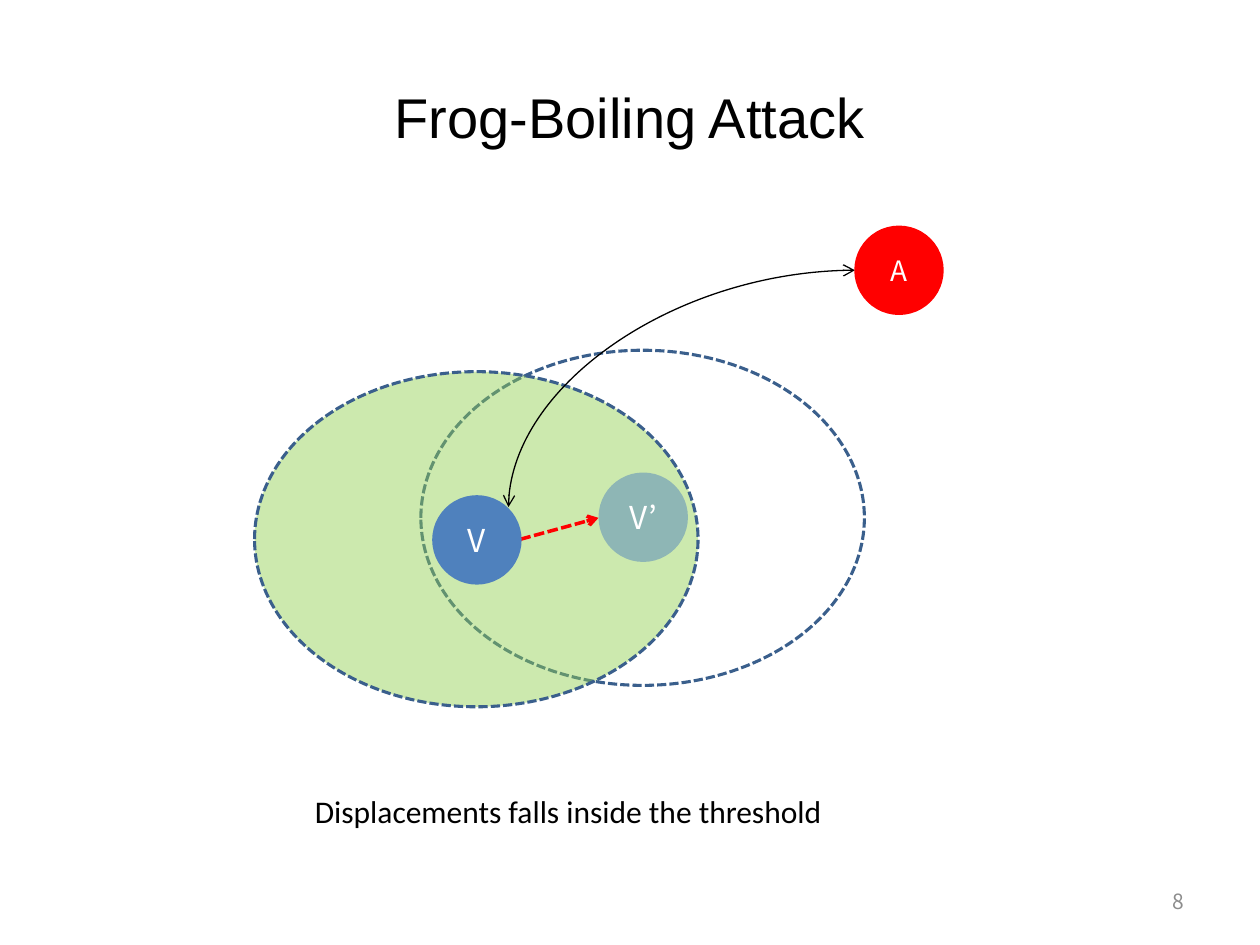
from dataclasses import dataclass
from typing import Optional

from lxml.etree import SubElement
from pptx import Presentation
from pptx.dml.color import RGBColor
from pptx.enum.dml import MSO_LINE
from pptx.enum.shapes import MSO_CONNECTOR, MSO_SHAPE
from pptx.enum.text import MSO_ANCHOR, PP_ALIGN
from pptx.oxml.ns import qn
from pptx.util import Inches, Pt

BLACK = RGBColor(0x00, 0x00, 0x00)
WHITE = RGBColor(0xFF, 0xFF, 0xFF)
GRAY = RGBColor(0x8C, 0x8C, 0x8C)
RED = RGBColor(0xFF, 0x00, 0x00)
BLUE = RGBColor(0x4F, 0x81, 0xBD)
NAVY = RGBColor(0x3A, 0x5F, 0x8C)
GREEN = RGBColor(0x92, 0xD0, 0x50)
SANS = "Noto Sans CJK KR"


@dataclass
class Oval:
    left: float
    top: float
    width: float
    height: float
    fill: Optional[RGBColor] = None
    alpha: int = 100
    text: str = ""
    size: int = 18


@dataclass
class Label:
    left: float
    top: float
    width: float
    height: float
    text: str
    size: int
    font: str
    color: RGBColor
    align: PP_ALIGN
    anchor: MSO_ANCHOR = MSO_ANCHOR.MIDDLE


ZONES = [
    Oval(3.34, 2.78, 3.52, 2.66),
    Oval(2.02, 2.95, 3.52, 2.66, GREEN, 46),
]
NODES = [
    Oval(6.78, 1.79, 0.71, 0.71, RED, text="A", size=16),
    Oval(3.43, 3.93, 0.71, 0.71, BLUE, text="V"),
    Oval(4.75, 3.75, 0.71, 0.71, BLUE, 49, "V’"),
]
LABELS = [
    Label(0.5, 0.3, 9, 1.25, "Frog-Boiling Attack", 32, "Arial", BLACK, PP_ALIGN.CENTER),
    Label(7.17, 6.95, 2.33, 0.4, "8", 12, SANS, GRAY, PP_ALIGN.RIGHT),
    Label(2.4, 6.24, 4.38, 0.4, "Displacements falls inside the threshold", 18,
          "Calibri", BLACK, PP_ALIGN.LEFT, MSO_ANCHOR.TOP),
]


def write(frame, text: str, size: int, font: str, color: RGBColor, align: PP_ALIGN) -> None:
    para = frame.paragraphs[0]
    para.alignment = align
    run = para.add_run()
    run.text = text
    run.font.size = Pt(size)
    run.font.name = font
    run.font.color.rgb = color
    for tag in ("a:ea", "a:cs"):
        SubElement(run.font._element, qn(tag), typeface=font)


def add_oval(slide, oval: Oval):
    shape = slide.shapes.add_shape(
        MSO_SHAPE.OVAL, Inches(oval.left), Inches(oval.top), Inches(oval.width), Inches(oval.height))
    shape.shadow.inherit = False
    if oval.fill is None:
        shape.fill.background()
    else:
        shape.fill.solid()
        shape.fill.fore_color.rgb = oval.fill
        if oval.alpha < 100:
            color = shape.element.spPr.find(qn("a:solidFill"))[0]
            SubElement(color, qn("a:alpha"), val=str(oval.alpha * 1000))
    return shape


def add_zone(slide, zone: Oval) -> None:
    line = add_oval(slide, zone).line
    line.color.rgb = NAVY
    line.width = Pt(1.75)
    line.dash_style = MSO_LINE.SQUARE_DOT


def add_node(slide, node: Oval) -> None:
    shape = add_oval(slide, node)
    shape.line.fill.background()
    frame = shape.text_frame
    frame.vertical_anchor = MSO_ANCHOR.MIDDLE
    write(frame, node.text, node.size, SANS, WHITE, PP_ALIGN.CENTER)


def add_label(slide, label: Label) -> None:
    box = slide.shapes.add_textbox(
        Inches(label.left), Inches(label.top), Inches(label.width), Inches(label.height))
    frame = box.text_frame
    frame.word_wrap = True
    frame.vertical_anchor = label.anchor
    write(frame, label.text, label.size, label.font, label.color, label.align)


def add_arrow(slide, kind: MSO_CONNECTOR, start: tuple[float, float], end: tuple[float, float],
              color: RGBColor, width: float, ends: tuple[str, ...]):
    arrow = slide.shapes.add_connector(kind, *map(Inches, start + end))
    line = arrow.line
    line.color.rgb = color
    line.width = Pt(width)
    if kind == MSO_CONNECTOR.STRAIGHT:
        line.dash_style = MSO_LINE.SQUARE_DOT
    props = arrow.element.spPr
    for tag in ends:
        SubElement(props.find(qn("a:ln")), qn(tag), type="arrow")
    SubElement(props, qn("a:effectLst"))
    return arrow


def main() -> None:
    deck = Presentation()
    deck.slide_width = Inches(10)
    deck.slide_height = Inches(7.5)
    slide = deck.slides.add_slide(deck.slide_layouts[6])

    for zone in ZONES:
        add_zone(slide, zone)
    for label in LABELS[:2]:
        add_label(slide, label)

    curve = add_arrow(slide, MSO_CONNECTOR.CURVE, (6.35, 4.46), (4.47, 1.71),
                      BLACK, 0.75, ("a:headEnd", "a:tailEnd"))
    props = curve.element.spPr
    props.find(qn("a:xfrm")).set("rot", str(90 * 60000))
    props.find(qn("a:prstGeom")).set("prst", "curvedConnector2")
    add_arrow(slide, MSO_CONNECTOR.STRAIGHT, (4.13, 4.28), (4.75, 4.11), RED, 2, ("a:tailEnd",))

    for node in NODES:
        add_node(slide, node)
    add_label(slide, LABELS[2])
    deck.save("out.pptx")


if __name__ == "__main__":
    main()
